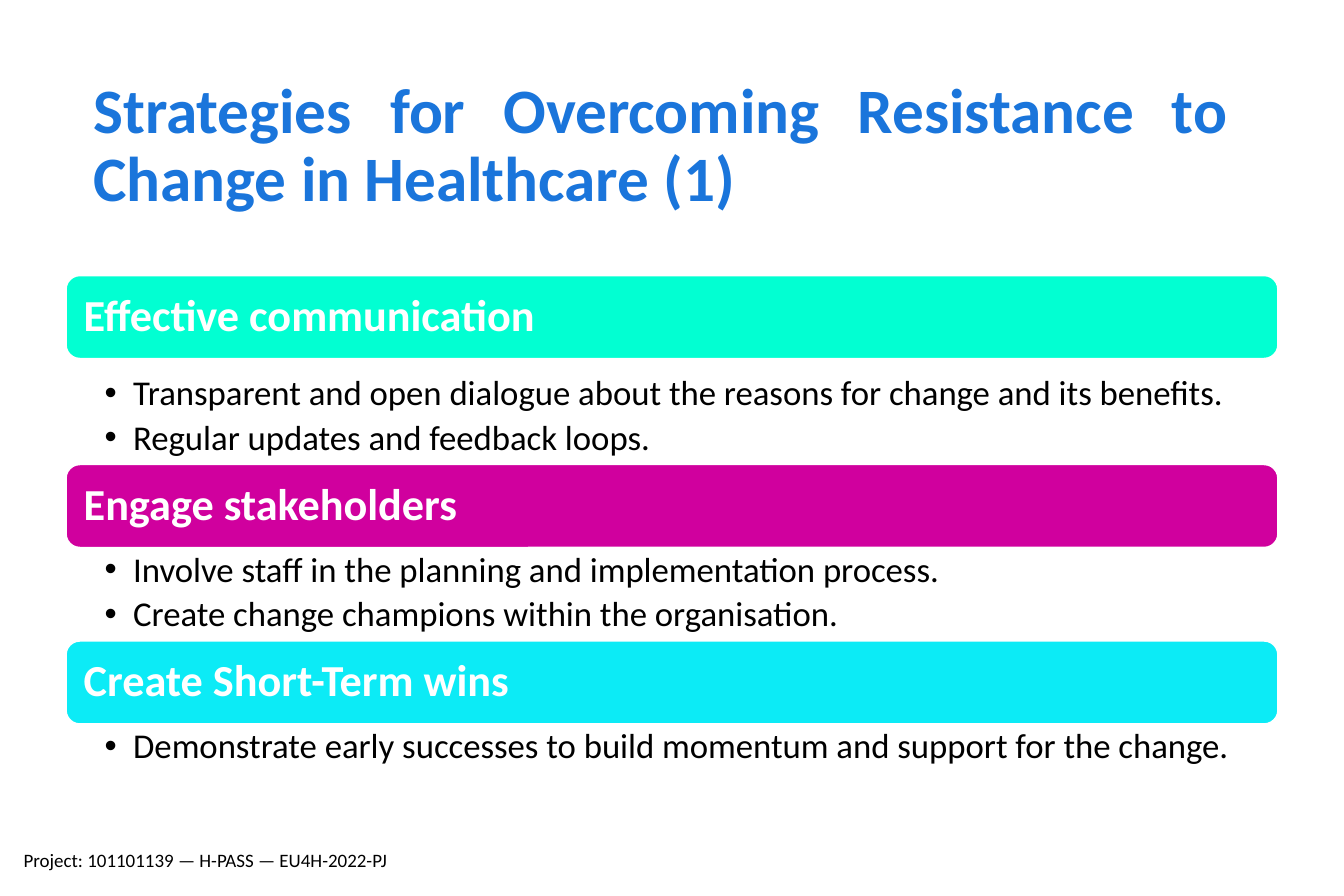
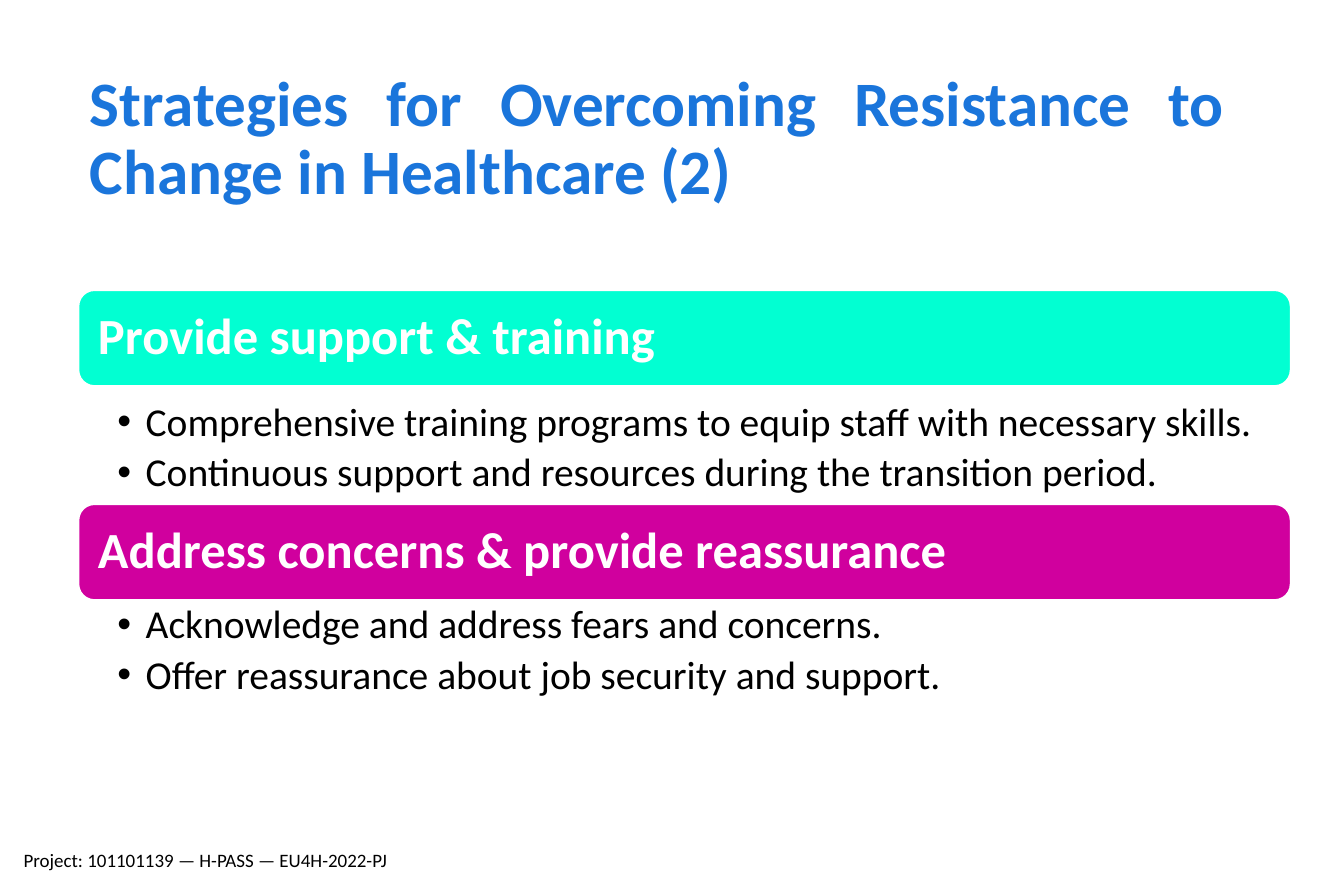
from lxml.etree import SubElement
from pptx import Presentation
from pptx.dml.color import RGBColor
from pptx.enum.shapes import MSO_SHAPE
from pptx.enum.text import MSO_ANCHOR, MSO_AUTO_SIZE, PP_ALIGN
from pptx.oxml.ns import qn
from pptx.util import Inches, Pt

BLUE, BLACK, WHITE = "1A75DB", "000000", "FFFFFF"
BANNER_FILLS = ["02FFD2", "D0009E", "0CEBF6"]
COMPARISON_LAYOUT = 4
TITLE = "Strategies for Overcoming Resistance to Change in Healthcare ({})"
FOOTER = "Project: 101101139 — H-PASS — EU4H-2022-PJ"

SLIDES = [
    dict(
        title_box=(0.72, 0.64, 10.17, 1.25), left=0.58, top=2.42,
        banner_height=0.73, banner_size=28, banner_inset=0.12,
        first_gap=0.11, list_size=22, list_heights=(0.82, 0.82, 0.51), right_inset=0.22,
        sections=[
            ("Effective communication", [
                "Transparent and open dialogue about the reasons for change and its benefits.",
                "Regular updates and feedback loops."]),
            ("Engage stakeholders", [
                "Involve staff in the planning and implementation process.",
                "Create change champions within the organisation."]),
            ("Create Short-Term wins", [
                "Demonstrate early successes to build momentum and support for the change."]),
        ],
    ),
    dict(
        title_box=(0.69, 0.58, 10.17, 1.21), left=0.69, top=2.55,
        banner_height=0.84, banner_size=32, banner_inset=0.13,
        first_gap=0.1, list_size=25, list_heights=(0.94, 0.94), right_inset=0.25,
        sections=[
            ("Provide support & training", [
                "Comprehensive training programs to equip staff with necessary skills.",
                "Continuous support and resources during the transition period."]),
            ("Address concerns & provide reassurance", [
                "Acknowledge and address fears and concerns.",
                "Offer reassurance about job security and support."]),
        ],
    ),
]


def rgb(color):
    return RGBColor.from_string(color)


class Deck:
    font = "Calibri"
    section_width = 10.65

    def __init__(self, prs):
        self.prs = prs
        self.slide = None

    def new_slide(self):
        layout = self.prs.slide_layouts[COMPARISON_LAYOUT]
        self.slide = self.prs.slides.add_slide(layout)

    def place(self, sp, box):
        sp.left, sp.top, sp.width, sp.height = map(Inches, box)

    def frame(self, sp, anchor=MSO_ANCHOR.TOP, insets=(0.1, 0.05, 0.1, 0.05)):
        """Set wrapping, anchor and insets (left, top, right, bottom)."""
        tf = sp.text_frame
        tf.word_wrap = True
        tf.auto_size = MSO_AUTO_SIZE.NONE
        tf.vertical_anchor = anchor
        tf.margin_left, tf.margin_top, tf.margin_right, tf.margin_bottom = map(Inches, insets)
        return tf

    def format(self, p, size, color, bold=False, align=PP_ALIGN.LEFT, spacing=0.9):
        p.alignment = align
        p.line_spacing = spacing
        p.space_before = Pt(0)
        for r in p.runs:
            r.font.name = self.font
            r.font.size = Pt(size)
            r.font.bold = bold
            r.font.color.rgb = rgb(color)

    def title(self, text, box):
        sp = self.slide.shapes.title
        self.place(sp, box)
        tf = self.frame(sp)
        tf.text = text
        self.format(tf.paragraphs[0], 40, BLUE, True, PP_ALIGN.JUSTIFY)

    def banner(self, text, box, fill, size, inset):
        sp = self.slide.shapes.add_shape(MSO_SHAPE.ROUNDED_RECTANGLE, *map(Inches, box))
        sp.shadow.inherit = False
        sp.fill.solid()
        sp.fill.fore_color.rgb = rgb(fill)
        sp.line.color.rgb = rgb(WHITE)
        sp.line.width = Pt(1)
        tf = self.frame(sp, MSO_ANCHOR.MIDDLE, (inset,) * 4)
        tf.text = text
        self.format(tf.paragraphs[0], size, WHITE, True)

    def bullet(self, p):
        pPr = p._p.get_or_add_pPr()
        pPr.set("marL", str(Inches(0.25)))
        pPr.set("indent", str(Inches(-0.25)))
        SubElement(pPr, qn("a:buFont"), typeface="Arial")
        SubElement(pPr, qn("a:buChar"), char="•")

    def bullets(self, sp, items, box, size, right_inset):
        self.place(sp, box)
        tf = self.frame(sp, insets=(0.34, 0.04, right_inset, 0.04))
        tf.text = "\n".join(items)
        for p in tf.paragraphs:
            self.bullet(p)
            self.format(p, size, BLACK, align=PP_ALIGN.JUSTIFY)
            p.space_after = Pt(0.2 * size)

    def sections(self, data):
        """Stack banners, each followed by its list; drop unused placeholders."""
        bodies = [ph for ph in self.slide.placeholders if ph.placeholder_format.idx > 0]
        left, width, y = data["left"], self.section_width, data["top"]
        rows = zip(data["sections"], data["list_heights"], BANNER_FILLS, bodies)
        for i, ((heading, items), height, fill, body) in enumerate(rows):
            self.banner(heading, (left, y, width, data["banner_height"]), fill,
                        data["banner_size"], data["banner_inset"])
            y += data["banner_height"] + (data["first_gap"] if i == 0 else 0)
            self.bullets(body, items, (left, y, width, height),
                         data["list_size"], data["right_inset"])
            y += height
        for ph in bodies[len(data["sections"]):]:
            ph.element.getparent().remove(ph.element)

    def footer(self, text):
        sp = self.slide.shapes.add_textbox(*map(Inches, (0.11, 7.4, 3.63, 0.27)))
        tf = self.frame(sp)
        tf.text = text
        self.format(tf.paragraphs[0], 12, BLACK, spacing=1.0)


def main():
    prs = Presentation()
    prs.slide_width, prs.slide_height = Inches(11.81), Inches(7.87)
    deck = Deck(prs)
    for number, data in enumerate(SLIDES, 1):
        deck.new_slide()
        deck.title(TITLE.format(number), data["title_box"])
        deck.sections(data)
        deck.footer(FOOTER)
    prs.save("out.pptx")


if __name__ == "__main__":
    main()
